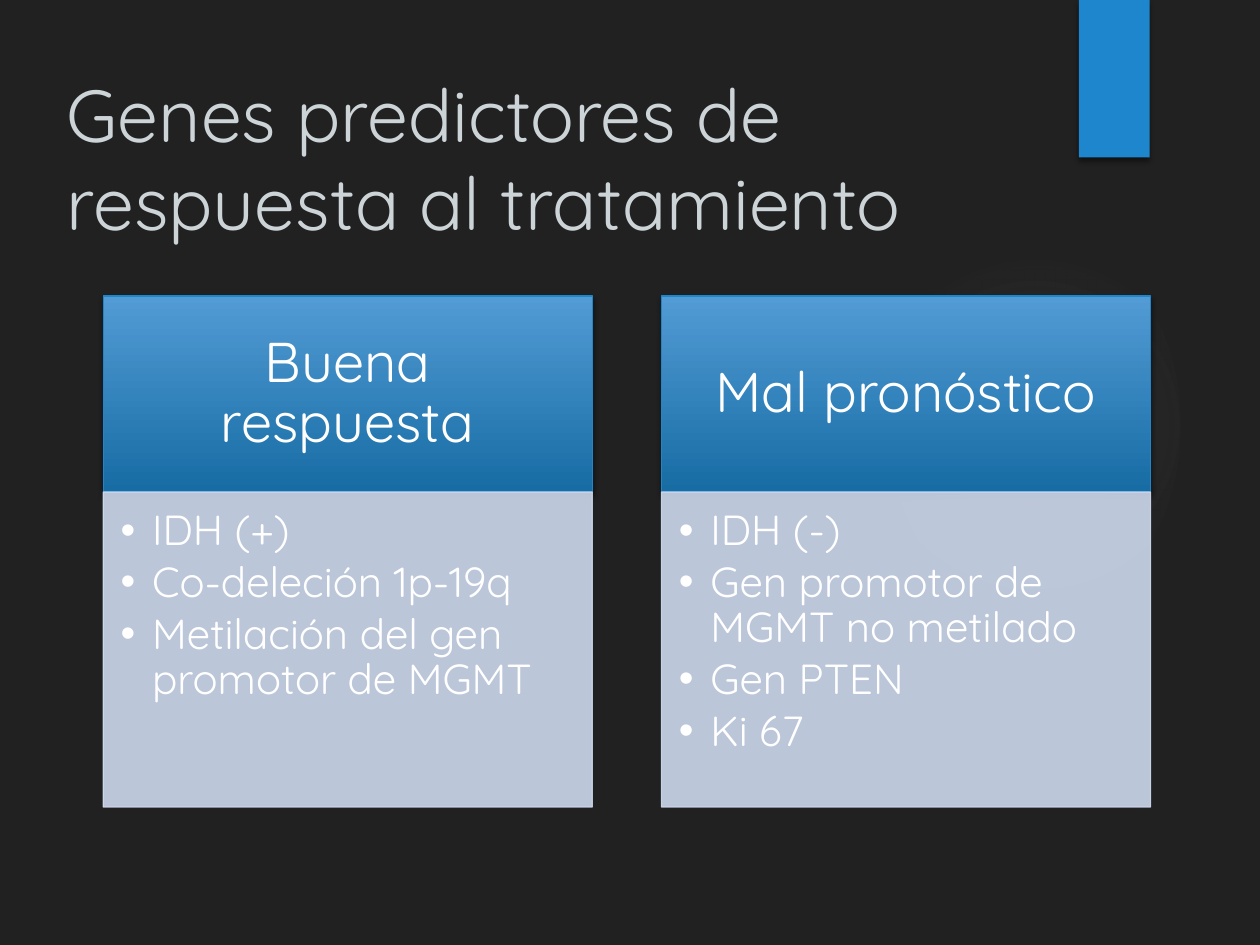
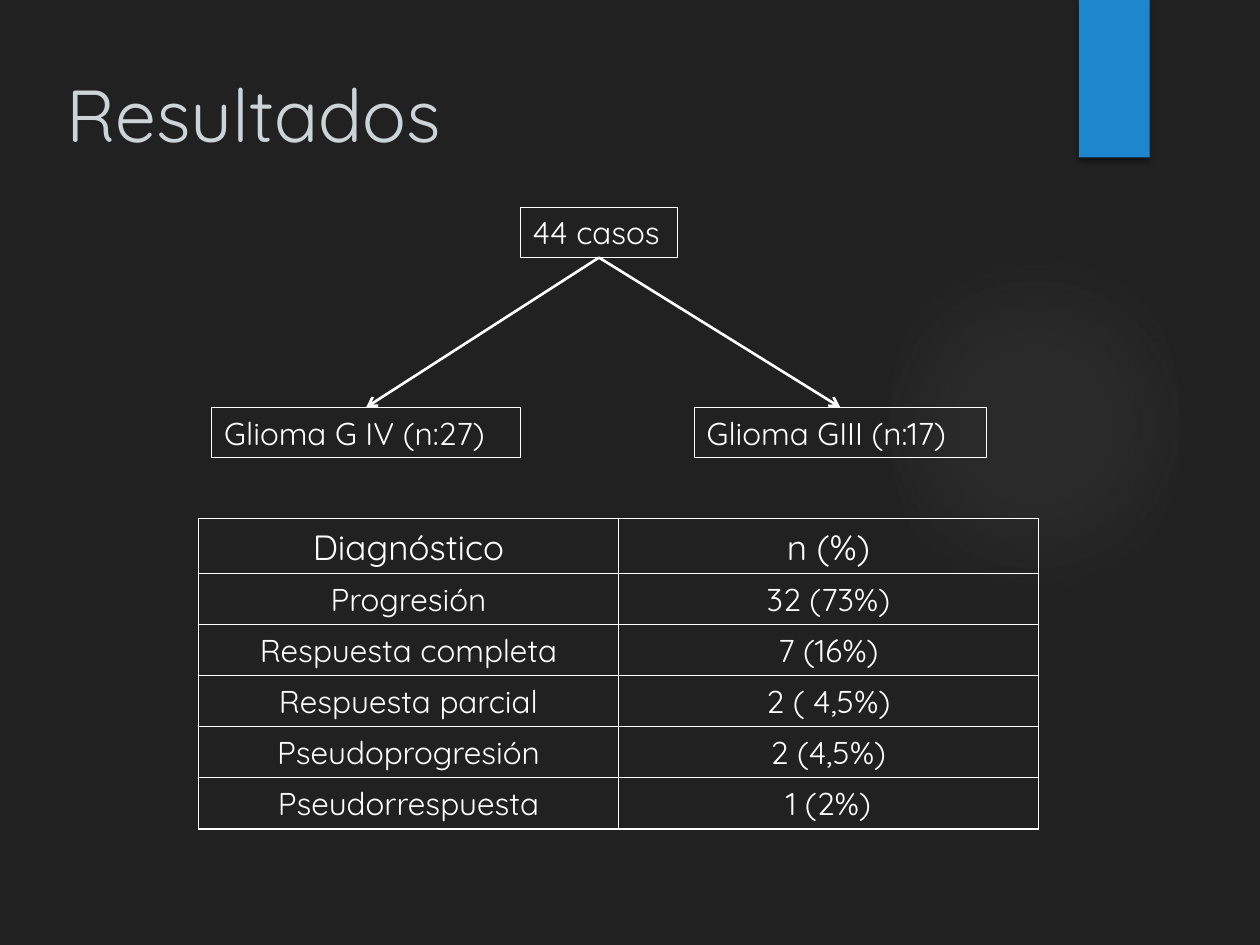
"""Build two dark slides on glioma genes and results."""
from dataclasses import dataclass
from typing import Any

import lxml.etree
import pptx
import pptx.dml.color
import pptx.enum.shapes
import pptx.enum.text
import pptx.oxml
import pptx.oxml.ns
import pptx.util

Pt = pptx.util.Pt
RGB = pptx.dml.color.RGBColor
qn = pptx.oxml.ns.qn
Kind = pptx.enum.shapes.MSO_SHAPE
Align = pptx.enum.text.PP_ALIGN
Anchor = pptx.enum.text.MSO_ANCHOR

FONT = "Quicksand"
DARK = RGB(0x21, 0x21, 0x21)
BLUE = RGB(0x1D, 0x86, 0xCD)
LIGHT = RGB(0x52, 0x9B, 0xD5)
DEEP = RGB(0x17, 0x6C, 0xA4)
PALE = RGB(0xCD, 0xD9, 0xED)
SILVER = RGB(0xCD, 0xD4, 0xD7)
GREY = RGB(0xA6, 0xA6, 0xA6)
WHITE = RGB(0xFF, 0xFF, 0xFF)
BLACK = RGB(0, 0, 0)


@dataclass(frozen=True)
class Area:
    """Hold a place in points."""
    left: float
    top: float
    width: float
    height: float

    def points(self) -> list[Any]:
        """Give the four lengths."""
        return [Pt(n) for n in (self.left, self.top, self.width, self.height)]

    @property
    def mid(self) -> float:
        """Give the centre from left to right."""
        return self.left + self.width / 2


@dataclass(frozen=True)
class Panel:
    """Hold a headed list."""
    left: float
    head: str
    items: tuple[str, ...]


@dataclass(frozen=True)
class Node:
    """Hold a box of the tree."""
    area: Area
    text: str


PANELS = (
    Panel(59, "Buena respuesta",
          ("IDH (+)", "Co-deleción 1p-19q", "Metilación del gen promotor de MGMT")),
    Panel(378, "Mal pronóstico",
          ("IDH (-)", "Gen promotor de MGMT no metilado", "Gen PTEN", "Ki 67")),
)
ROOT = Node(Area(297.3, 118.4, 90, 28.8), "44 casos")
LEAVES = (
    Node(Area(121, 232.8, 176.4, 28.8), "Glioma G IV (n:27)"),
    Node(Area(396.7, 232.8, 167, 28.8), "Glioma GIII (n:17)"),
)
ROWS = (
    ("Diagnóstico", "n (%)"),
    ("Progresión", "32 (73%)"),
    ("Respuesta completa", "7 (16%)"),
    ("Respuesta parcial", "2 ( 4,5%)"),
    ("Pseudoprogresión", "2 (4,5%)"),
    ("Pseudorrespuesta", "1 (2%)"),
)


def child(node: Any, tag: str, **attrs: Any) -> Any:
    """Append a drawing element with attributes."""
    return lxml.etree.SubElement(
        node, qn(f"a:{tag}"), {key: str(val) for key, val in attrs.items()})


def paint(node: Any, color: RGB, alpha: int = 100) -> None:
    """Append a colour with its opacity in percent."""
    child(child(node, "srgbClr", val=color), "alpha", val=alpha * 1000)


def grade(shape: Any, stops: list[tuple[int, RGB, int]], round_fill: bool = False) -> None:
    """Fill a shape with a downward or round gradient."""
    shape.fill.background()
    blank = shape._element.spPr.find(qn("a:noFill"))
    fill = pptx.oxml.parse_xml(f'<a:gradFill {pptx.oxml.ns.nsdecls("a")} rotWithShape="1"/>')
    stop_list = child(fill, "gsLst")
    for pos, color, alpha in stops:
        paint(child(stop_list, "gs", pos=pos * 1000), color, alpha)
    if round_fill:
        child(child(fill, "path", path="circle"), "fillToRect", l=50000, t=50000, r=50000, b=50000)
    else:
        child(fill, "lin", ang=5400000, scaled=0)
    blank.getparent().replace(blank, fill)


def shade(shape: Any) -> None:
    """Cast a soft shadow below a shape."""
    effects = shape._element.spPr.find(qn("a:effectLst"))
    drop = child(effects, "outerShdw", blurRad=Pt(3), dist=Pt(2), dir=5400000, rotWithShape=0)
    paint(drop, BLACK, 45)


def draw(slide: Any, area: Area, line: RGB | None = None, kind: Any = Kind.RECTANGLE) -> Any:
    """Add an unfilled shape, with a thin line if asked."""
    shape = slide.shapes.add_shape(kind, *area.points())
    shape.shadow.inherit = False
    shape.fill.background()
    if line is None:
        shape.line.fill.background()
    else:
        shape.line.color.rgb = line
        shape.line.width = Pt(0.75)
    return shape


def style(para: Any, size: float, color: RGB = WHITE, align: Any = Align.LEFT) -> None:
    """Set the font and place of a paragraph."""
    para.alignment = align
    para.font.name = FONT
    para.font.size = Pt(size)
    para.font.color.rgb = color


def inset(frame: Any, left: float, top: float, right: float, base: float) -> None:
    """Wrap a frame and set its margins."""
    frame.word_wrap = True
    frame.margin_left, frame.margin_top = Pt(left), Pt(top)
    frame.margin_right, frame.margin_bottom = Pt(right), Pt(base)


def start(deck: Any, title: str) -> Any:
    """Add a slide with the shared backdrop and title."""
    slide = deck.slides.add_slide(deck.slide_layouts[6])
    slide.background.fill.solid()
    slide.background.fill.fore_color.rgb = DARK
    glow = draw(slide, Area(508.3, 131.8, 166.3, 221.8), kind=Kind.OVAL)
    grade(glow, [(0, GREY, 7), (36, GREY, 6), (69, GREY, 0)], True)
    band = draw(slide, Area(616.5, 0, 40.4, 90))
    band.fill.solid()
    band.fill.fore_color.rgb = BLUE
    shade(band)
    frame = slide.shapes.add_textbox(*Area(31, 36, 562.3, 110).points()).text_frame
    frame.word_wrap = True
    frame.text = title
    style(frame.paragraphs[0], 42, SILVER)
    return slide


def draw_panel(slide: Any, panel: Panel) -> None:
    """Draw a heading over a bulleted list."""
    head = draw(slide, Area(panel.left, 169.2, 279.5, 112), BLUE)
    grade(head, [(0, LIGHT, 100), (100, DEEP, 100)])
    shade(head)
    frame = head.text_frame
    inset(frame, 18, 10, 18, 10)
    frame.vertical_anchor = Anchor.MIDDLE
    frame.text = panel.head
    frame.paragraphs[0].line_spacing = 0.9
    style(frame.paragraphs[0], 32, align=Align.CENTER)

    body = draw(slide, Area(panel.left, 281.2, 279.5, 180), PALE)
    body.fill.solid()
    body.fill.fore_color.rgb = PALE
    for color in list(body._element.spPr.iter(qn("a:srgbClr"))):
        child(color, "alpha", val=90000)
    frame = body.text_frame
    inset(frame, 10, 10, 13.5, 15)
    frame.vertical_anchor = Anchor.TOP
    frame.text = "\n".join(panel.items)
    for para in frame.paragraphs:
        props = para._p.get_or_add_pPr()
        props.set("marL", str(Pt(18)))
        props.set("indent", str(Pt(-18)))
        child(props, "buFont", typeface="Arial")
        child(props, "buChar", char="•")
        para.line_spacing = 0.9
        para.space_after = Pt(3.6)
        style(para, 24)


def draw_node(slide: Any, node: Node) -> None:
    """Draw a lined box with its label."""
    frame = draw(slide, node.area, WHITE).text_frame
    inset(frame, 7.2, 3.6, 0, 3.6)
    frame.vertical_anchor = Anchor.TOP
    frame.text = node.text
    style(frame.paragraphs[0], 18)


def join(slide: Any, root: Area, leaf: Area) -> None:
    """Draw an arrow from a box down to another."""
    ends = (root.mid, root.top + root.height, leaf.mid, leaf.top)
    arrow = slide.shapes.add_connector(
        pptx.enum.shapes.MSO_CONNECTOR.STRAIGHT, *[Pt(n) for n in ends])
    arrow.line.color.rgb = WHITE
    arrow.line.width = Pt(1.5)
    child(arrow.line._get_or_add_ln(), "tailEnd", type="arrow")
    child(arrow._element.spPr, "effectLst")


def edge(cell: Any) -> None:
    """Line all four sides of a cell and clear its fill."""
    props = cell._tc.get_or_add_tcPr()
    for side in ("lnL", "lnR", "lnT", "lnB"):
        paint(child(child(props, side, w=Pt(1)), "solidFill"), WHITE)
    cell.fill.background()


def draw_table(slide: Any, area: Area) -> None:
    """Draw the table of counts."""
    table = slide.shapes.add_table(len(ROWS), len(ROWS[0]), *area.points()).table
    table.first_row = table.horz_banding = False
    for i, row in enumerate(ROWS):
        for j, text in enumerate(row):
            cell = table.cell(i, j)
            cell.text = text
            style(cell.text_frame.paragraphs[0], 18 if i else 20, align=Align.CENTER)
            edge(cell)


def main() -> None:
    """Build and save the deck."""
    deck = pptx.Presentation()
    deck.slide_width, deck.slide_height = Pt(720), Pt(540)
    genes = start(deck, "Genes predictores de respuesta al tratamiento")
    for panel in PANELS:
        draw_panel(genes, panel)
    counts = start(deck, "Resultados")
    for node in (ROOT, *LEAVES):
        draw_node(counts, node)
    draw_table(counts, Area(113.4, 296.4, 480, 175.2))
    for leaf in LEAVES:
        join(counts, ROOT.area, leaf.area)
    deck.save("out.pptx")


if __name__ == "__main__":
    main()
